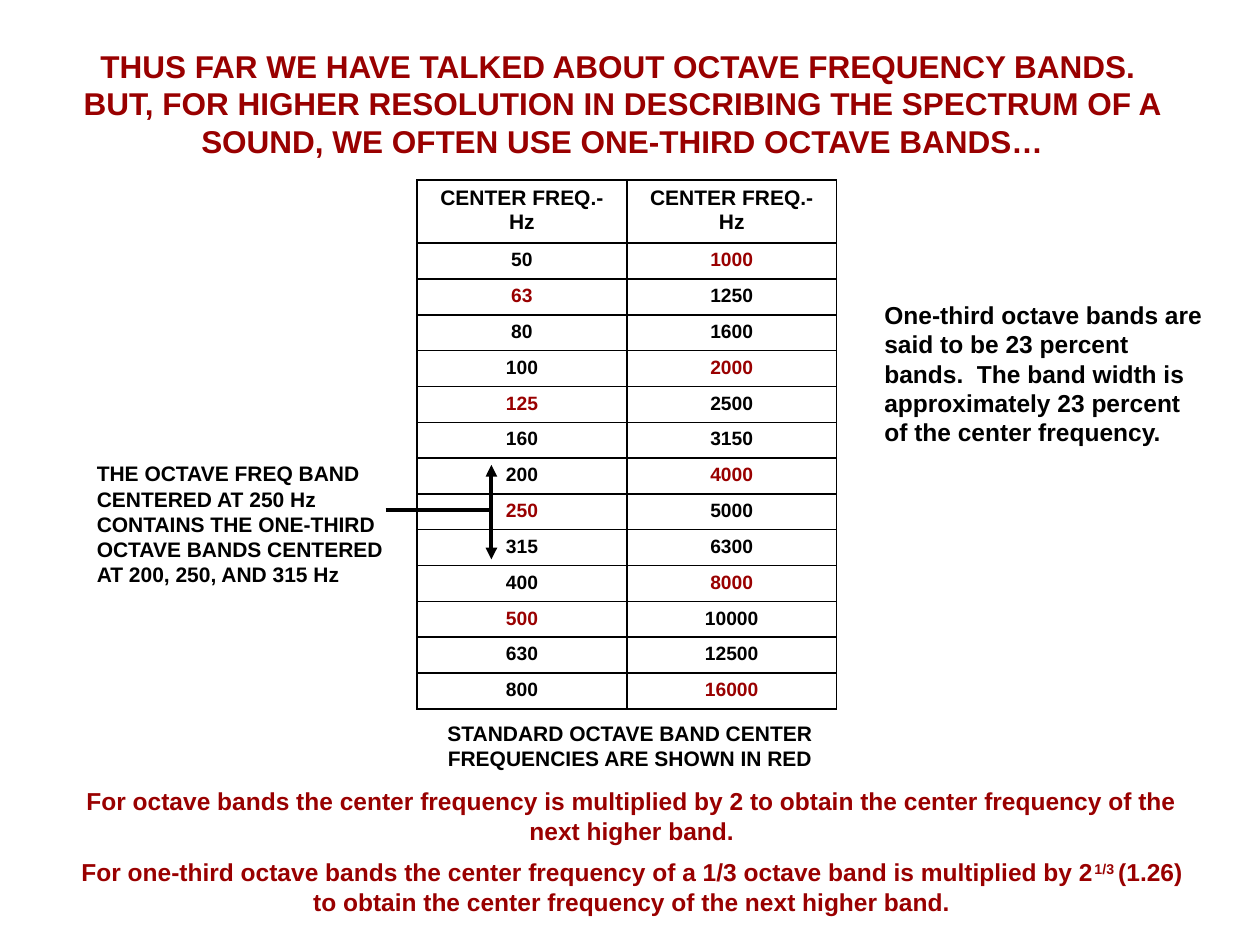
"""Build a slide explaining one-third octave frequency bands."""
from lxml import etree
from pptx import Presentation
from pptx import util as u
from pptx.dml.color import RGBColor
from pptx.enum import shapes, text
from pptx.oxml import ns

RED = RGBColor(0x99, 0x00, 0x00)
BLACK = RGBColor(0, 0, 0)
FONT = "Arial"
LEFT, CENTER = text.PP_ALIGN.LEFT, text.PP_ALIGN.CENTER

TITLE = (
    "THUS FAR WE HAVE TALKED ABOUT OCTAVE FREQUENCY BANDS.  BUT, FOR HIGHER "
    "RESOLUTION IN DESCRIBING THE SPECTRUM OF A SOUND, WE OFTEN USE ONE-THIRD "
    "OCTAVE BANDS…"
)
HEADER = "CENTER FREQ.- Hz"
FREQUENCIES = [
    [50, 63, 80, 100, 125, 160, 200, 250, 315, 400, 500, 630, 800],
    [1000, 1250, 1600, 2000, 2500, 3150, 4000, 5000, 6300, 8000, 10000, 12500, 16000],
]
OCTAVE_CENTERS = {63, 125, 250, 500, 1000, 2000, 4000, 8000, 16000}
NOTES = [
    ((3.21, 5.67, 3.58, 0.5), CENTER, 12, BLACK,
     [["STANDARD OCTAVE BAND CENTER FREQUENCIES ARE SHOWN IN RED"]]),
    ((0.67, 3.61, 2.5, 1.1), LEFT, 12, BLACK,
     [["THE OCTAVE FREQ BAND CENTERED AT 250 Hz CONTAINS THE ONE-THIRD OCTAVE "
       "BANDS CENTERED AT 200, 250, AND 315 Hz"]]),
    ((0.43, 6.19, 9.17, 1.16), CENTER, 14, RED,
     [["For octave bands the center frequency is multiplied by 2 to obtain the "
       "center frequency of the next higher band."],
      ["For one-third octave bands the center frequency of a 1/3 octave band is "
       "multiplied by 2", "1/3 ",
       "(1.26) to obtain the center frequency of the next higher band."]]),
    ((6.92, 2.33, 2.75, 1.26), LEFT, 14, BLACK,
     [["One-third octave bands are said to be 23 percent bands.  The band width is "
       "approximately 23 percent of the center frequency."]]),
]
SUPERSCRIPT = "1/3 "
TABLE_AREA = (3.31, 1.43, 3.33, 4.2)
HEADER_HEIGHT = 0.5
BAND_ARROW = (3.9, 3.69, 3.9, 4.44)
POINTER = (3.06, 4.05, 3.9, 4.05)


def inches(values):
    return [u.Inches(value) for value in values]


def style(span, size, color):
    span.font.name = FONT
    span.font.size = u.Pt(size)
    span.font.bold = True
    span.font.color.rgb = color


def fill_frame(frame, paragraphs, align, size, color):
    frame.word_wrap = True
    frame.auto_size = text.MSO_AUTO_SIZE.NONE
    frame.vertical_anchor = text.MSO_ANCHOR.TOP
    for index, spans in enumerate(paragraphs):
        para = frame.add_paragraph() if index else frame.paragraphs[0]
        para.alignment = align
        para.space_before = u.Pt(size / 2 if index else 0)
        for words in spans:
            span = para.add_run()
            span.text = words
            style(span, size, color)
            if words == SUPERSCRIPT:
                span.font._element.set("baseline", "30000")


def add_borders(cell):
    properties = cell._tc.get_or_add_tcPr()
    for side in ("lnL", "lnR", "lnT", "lnB"):
        border = etree.SubElement(properties, ns.qn(f"a:{side}"), w=str(u.Pt(1)))
        solid = etree.SubElement(border, ns.qn("a:solidFill"))
        etree.SubElement(solid, ns.qn("a:srgbClr"), val=str(BLACK))


def fill_cell(cell, words, size, color):
    cell.margin_top = cell.margin_bottom = u.Inches(0.05)
    para = cell.text_frame.paragraphs[0]
    para.text = words
    para.alignment = CENTER
    style(para.runs[0], size, color)
    add_borders(cell)
    cell.fill.background()


def add_frequency_table(page):
    count = len(FREQUENCIES[0])
    table = page.shapes.add_table(
        count + 1, len(FREQUENCIES), *inches(TABLE_AREA)).table
    table.first_row = table.horz_banding = False
    row_height = (TABLE_AREA[3] - HEADER_HEIGHT) / count
    for index, row in enumerate(table.rows):
        row.height = u.Inches(row_height if index else HEADER_HEIGHT)
    for column, values in enumerate(FREQUENCIES):
        fill_cell(table.cell(0, column), HEADER, 12, BLACK)
        for row, value in enumerate(values, 1):
            color = RED if value in OCTAVE_CENTERS else BLACK
            fill_cell(table.cell(row, column), str(value), 11, color)


def add_line(page, ends, arrows=()):
    line = page.shapes.add_connector(shapes.MSO_CONNECTOR.STRAIGHT, *inches(ends))
    line.line.color.rgb = BLACK
    line.line.width = u.Pt(2.25)
    for arrow in arrows:
        etree.SubElement(line.line._get_or_add_ln(), ns.qn(f"a:{arrow}"), type="triangle")
    etree.SubElement(line._element.spPr, ns.qn("a:effectLst"))


def main():
    deck = Presentation()
    deck.slide_width, deck.slide_height = inches((10, 7.5))
    page = deck.slides.add_slide(deck.slide_layouts[5])
    title = page.shapes.title
    title.left, title.top, title.width, title.height = inches((0.48, 0.32, 8.92, 1))
    fill_frame(title.text_frame, [[TITLE]], CENTER, 18, RED)
    add_frequency_table(page)
    for area, align, size, color, paragraphs in NOTES:
        box = page.shapes.add_textbox(*inches(area))
        fill_frame(box.text_frame, paragraphs, align, size, color)
    add_line(page, BAND_ARROW, ("headEnd", "tailEnd"))
    add_line(page, POINTER)
    deck.save("out.pptx")


if __name__ == "__main__":
    main()
